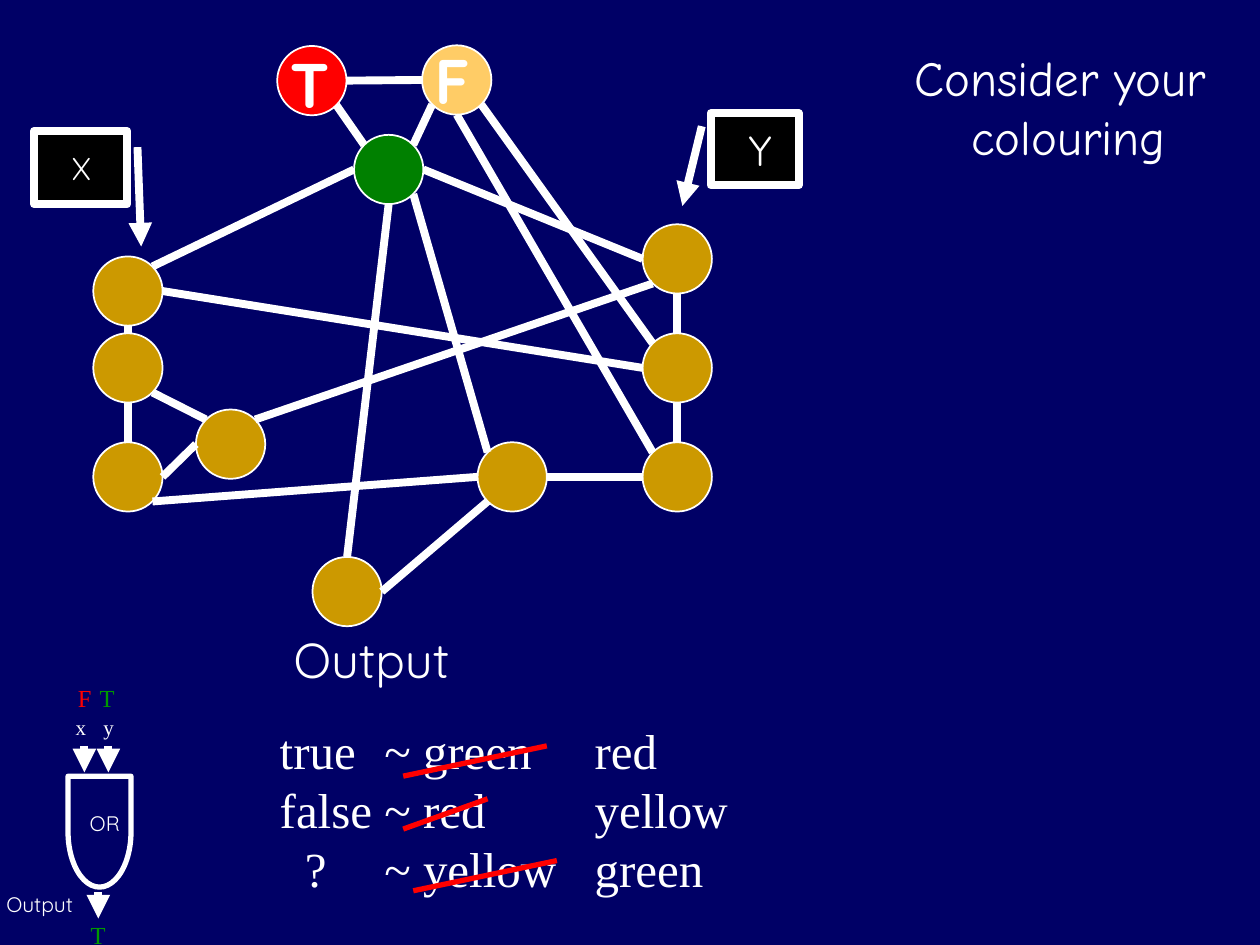
from lxml import etree
from pptx import Presentation
from pptx.dml.color import RGBColor
from pptx.enum.shapes import MSO_CONNECTOR, MSO_SHAPE
from pptx.enum.text import MSO_ANCHOR, MSO_AUTO_SIZE, PP_ALIGN
from pptx.oxml.ns import qn
from pptx.util import Inches, Pt

OVAL = MSO_SHAPE.OVAL
CALLOUT = MSO_SHAPE.LINE_CALLOUT_1
GATE = MSO_SHAPE.FLOWCHART_DELAY
STRAIGHT = MSO_CONNECTOR.STRAIGHT
LEFT, CENTER = PP_ALIGN.LEFT, PP_ALIGN.CENTER
TOP, MIDDLE = MSO_ANCHOR.TOP, MSO_ANCHOR.MIDDLE
GROW, FIXED = MSO_AUTO_SIZE.SHAPE_TO_FIT_TEXT, MSO_AUTO_SIZE.NONE

NAVY = RGBColor(0x00, 0x00, 0x66)
WHITE = RGBColor(0xFF, 0xFF, 0xFF)
BLACK = RGBColor(0x00, 0x00, 0x00)
GOLD = RGBColor(0xCC, 0x99, 0x00)
YELLOW = RGBColor(0xFF, 0xCC, 0x66)
GREEN = RGBColor(0x00, 0x80, 0x00)
LEAF = RGBColor(0x00, 0x99, 0x00)
RED = RGBColor(0xFF, 0x00, 0x00)

SERIF, SANS, COMIC = "Times New Roman", "Quicksand", "Comic Neue"

COLUMNS, ROWS = 100, 75
CELL = Inches(10) // COLUMNS
RADIUS = 2.75
DIAGONAL = 0.71

X_COLUMN, Y_COLUMN = 10.15, 53.75
TOP_ROW, MIDDLE_ROW, BOTTOM_ROW = 20.55, 29.2, 37.85

PALETTE_NODES = {
    "yellow": (36.25, 6.35, YELLOW),
    "green": (30.85, 13.45, GREEN),
    "red": (24.75, 6.4, RED),
}
GADGET_NODES = {
    "x1": (X_COLUMN, 23.1, GOLD),
    "x2": (X_COLUMN, MIDDLE_ROW, GOLD),
    "x3": (X_COLUMN, BOTTOM_ROW, GOLD),
    "y1": (Y_COLUMN, TOP_ROW, GOLD),
    "y2": (Y_COLUMN, MIDDLE_ROW, GOLD),
    "y3": (Y_COLUMN, BOTTOM_ROW, GOLD),
    "inner": (18.3, 35.25, GOLD),
    "join": (40.65, BOTTOM_ROW, GOLD),
    "output": (27.55, 46.95, GOLD),
}
NODES = {**PALETTE_NODES, **GADGET_NODES}

RIM = {
    "N": (0, -1), "S": (0, 1), "W": (-1, 0), "E": (1, 0),
    "NW": (-DIAGONAL, -DIAGONAL), "NE": (DIAGONAL, -DIAGONAL),
    "SW": (-DIAGONAL, DIAGONAL), "SE": (DIAGONAL, DIAGONAL),
}
EDGES = [
    ("red", "E", "yellow", "W"), ("red", "SE", "green", "NW"),
    ("yellow", "SE", "y2", "NW"), ("yellow", "S", "y3", "NW"),
    ("green", "SE", "join", "NW"), ("x1", "NE", "green", "W"),
    ("green", "E", "y1", "W"), ("x1", "E", "y2", "W"),
    ("output", "N", "green", "S"), ("output", "E", "join", "SW"),
    ("x3", "SE", "join", "W"), ("join", "E", "y3", "W"),
    ("x2", "S", "x3", "N"), ("x1", "S", "x2", "N"),
    ("x2", "SE", "inner", "NW"), ("inner", "W", "x3", "E"),
    ("inner", "NE", "y1", "SW"), ("y1", "S", "y2", "N"),
    ("y2", "S", "y3", "N"),
]


def cells(*counts):
    return [round(count * CELL) for count in counts]


def add_arrowhead(line):
    etree.SubElement(line._get_or_add_ln(), qn("a:tailEnd"), type="triangle")


def write(frame, lines, font, size, color, align=LEFT, anchor=TOP,
          sizing=GROW, bold=False):
    frame.margin_left = frame.margin_right = Inches(0.3)
    frame.margin_top = frame.margin_bottom = Inches(0.05)
    frame.word_wrap = False
    frame.auto_size = sizing
    frame.vertical_anchor = anchor
    frame.text = "\n".join(lines)
    for paragraph in frame.paragraphs:
        paragraph.alignment = align
        paragraph.font.name = font
        paragraph.font.size = Pt(size)
        paragraph.font.bold = bold
        paragraph.font.color.rgb = color


def add_label(slide, box, lines, font, size, color=WHITE, **style):
    label = slide.shapes.add_textbox(*cells(*box))
    write(label.text_frame, lines, font, size, color, **style)
    return label


def set_tab_stops(label, *stops):
    for paragraph in label.text_frame.paragraphs:
        tabs = etree.SubElement(paragraph._p.get_or_add_pPr(), qn("a:tabLst"))
        paragraph._p.pPr.insert(0, tabs)
        for stop in stops:
            etree.SubElement(tabs, qn("a:tab"), pos=str(Inches(stop)), algn="l")


def add_outlined(slide, preset, box, fill, width):
    outlined = slide.shapes.add_shape(preset, *cells(*box))
    outlined.shadow.inherit = False
    if fill is None:
        outlined.fill.background()
    else:
        outlined.fill.solid()
        outlined.fill.fore_color.rgb = fill
    outlined.line.color.rgb = WHITE
    outlined.line.width = Pt(width)
    return outlined


def add_nodes(slide, nodes):
    for x, y, color in nodes.values():
        box = (x - RADIUS, y - RADIUS, 2 * RADIUS, 2 * RADIUS)
        add_outlined(slide, OVAL, box, color, 1)


def add_stroke(slide, start, end, color=WHITE, width=4.5, arrow=False):
    stroke = slide.shapes.add_connector(STRAIGHT, *cells(*start, *end))
    stroke.line.color.rgb = color
    stroke.line.width = Pt(width)
    if arrow:
        add_arrowhead(stroke.line)
    etree.SubElement(stroke._element.spPr, qn("a:effectLst"))


def rim_point(node, side):
    x, y, _ = NODES[node]
    dx, dy = RIM[side]
    return x + RADIUS * dx, y + RADIUS * dy


def add_edge(slide, source, source_side, target, target_side):
    add_stroke(slide, rim_point(source, source_side),
               rim_point(target, target_side))


def add_input_callout(slide, box, name, size, pointer, mirrored=False):
    callout = add_outlined(slide, CALLOUT, box, BLACK, 4.5)
    for index, share in enumerate(pointer):
        callout.adjustments[index] = share
    add_arrowhead(callout.line)
    if mirrored:
        callout._element.spPr.xfrm.set("flipH", "1")
    write(callout.text_frame, [name], SANS, size, WHITE, CENTER, MIDDLE, FIXED)
    callout.text_frame.word_wrap = True


def add_or_gate(slide):
    gate = add_outlined(slide, GATE, (3.5, 63.5, 8.8, 5), None, 3)
    gate.rotation = 90
    gate._element.spPr.xfrm.set("flipV", "1")
    write(gate.text_frame, ["OR"], SANS, 12, WHITE, CENTER, MIDDLE)
    gate.text_frame._txBody.bodyPr.set("vert", "eaVert")
    for x, y in [(6.7, 59.2), (8.6, 59.2), (7.8, 70.8)]:
        add_stroke(slide, (x, y), (x, y + 2.1), arrow=True)
    add_label(slide, (2.7, 53.7, 7.6, 3.3), [" F"], SERIF, 14, RED)
    for x, y in [(4.9, 53.7), (4.2, 72.5)]:
        add_label(slide, (x, y, 7.2, 3.3), ["T"], SERIF, 14, LEAF)
    for x, name in [(3, "x"), (5.2, "y")]:
        add_label(slide, (x, 56.2, 6.8, 3), [name], SERIF, 12)
    add_label(slide, (-2.5, 70.3, 11.6, 3), ["Output"], SANS, 12)


def add_colour_key(slide):
    guesses = ["true\t~ green", "false\t~ red", "\t?\t~ yellow"]
    key = add_label(slide, (19.2, 56.7, 28.2, 15), guesses, SERIF, 28)
    set_tab_stops(key, 0.2, 0.83)
    add_label(slide, (44.2, 56.7, 16.6, 15), ["red", "yellow", "green"],
              SERIF, 28)
    for x, y, length in [(32, 61.6, 11.4), (32, 65.8, 6.7), (32.8, 70.7, 11.4)]:
        add_stroke(slide, (x, y), (x + length, y - 2.4), RED, 3)


def main():
    deck = Presentation()
    deck.slide_width, deck.slide_height = cells(COLUMNS, ROWS)
    slide = deck.slides.add_slide(deck.slide_layouts[6])
    slide.background.fill.solid()
    slide.background.fill.fore_color.rgb = NAVY

    add_nodes(slide, GADGET_NODES)
    for edge in EDGES:
        add_edge(slide, *edge)
    add_input_callout(slide, (2.7, 10.4, 7.4, 5.8), "X", 18,
                      (0.22, 1.11, 1.58, 1.15))
    add_input_callout(slide, (56.4, 9, 7, 5.7), "Y", 24,
                      (0.18, 1.1, 1.29, 1.32), mirrored=True)
    add_label(slide, (20.3, 49.5, 18.9, 5.7), ["Output"], SANS, 28)
    add_nodes(slide, PALETTE_NODES)
    add_edge(slide, "yellow", "SW", "green", "NE")
    for x, y, name in [(20.5, 3.1, "T"), (32, 2.8, "F")]:
        add_label(slide, (x, y, 5.5, 5.5), [name], SANS, 36,
                  sizing=FIXED, bold=True)
    add_label(slide, (68.8, 3.3, 32, 10.3), ["Consider your \vcolouring"],
              COMIC, 28, align=CENTER)
    add_colour_key(slide)
    add_or_gate(slide)
    deck.save("out.pptx")


if __name__ == "__main__":
    main()
